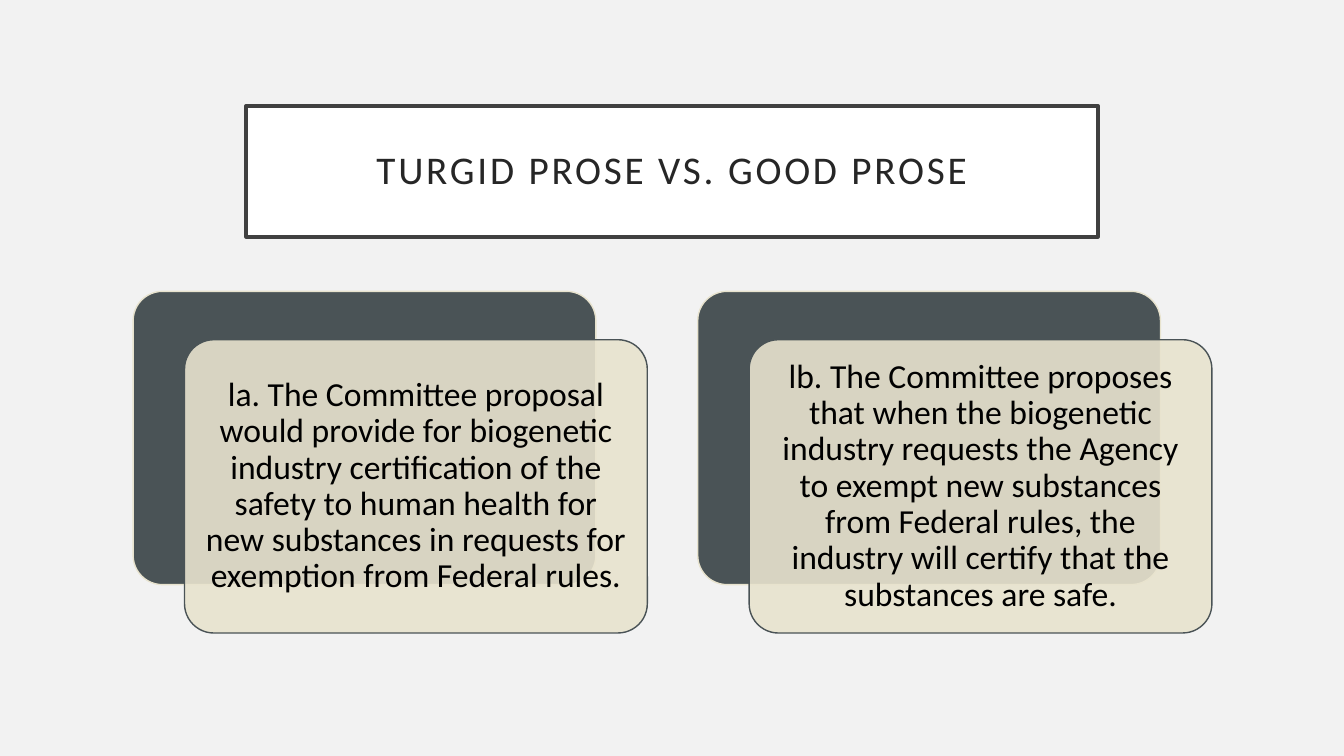
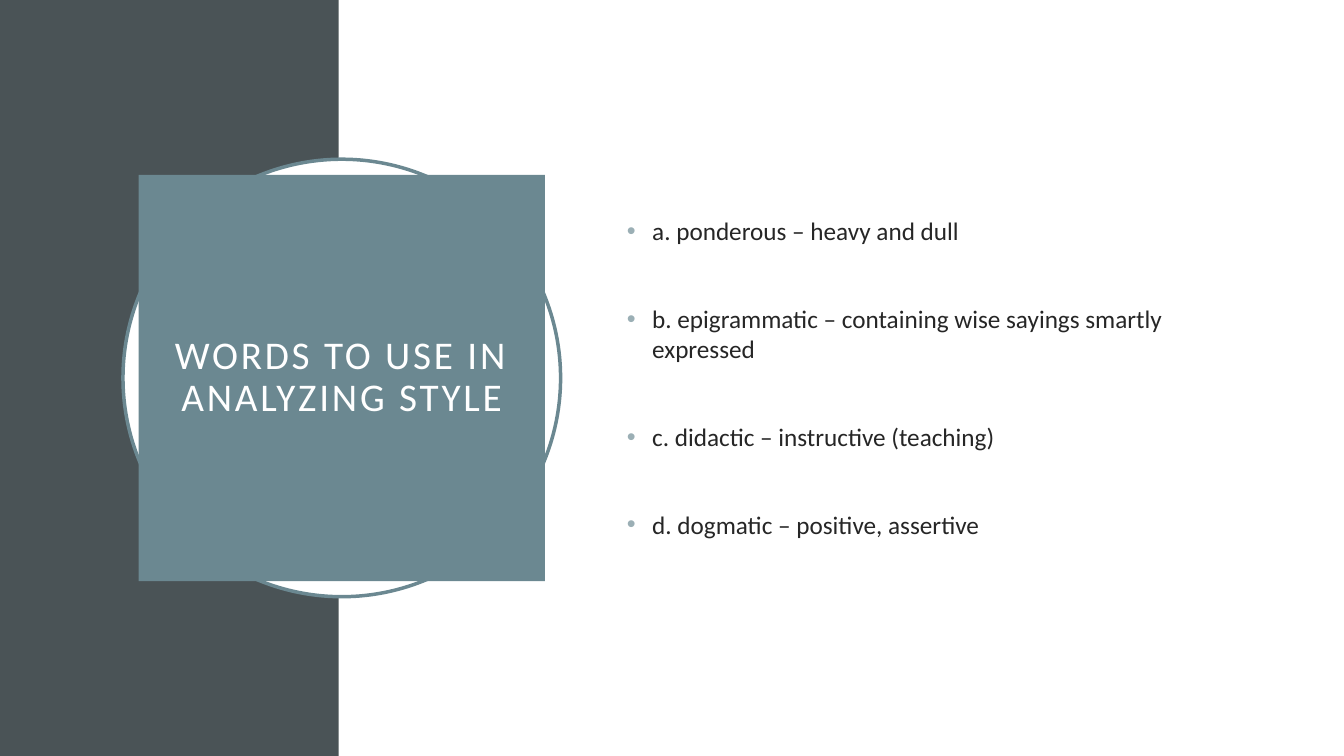
from dataclasses import dataclass

from lxml import etree
from pptx import Presentation
from pptx.dml.color import RGBColor
from pptx.enum.shapes import MSO_SHAPE
from pptx.enum.text import MSO_ANCHOR, PP_ALIGN
from pptx.oxml.ns import qn
from pptx.util import Inches, Pt

RECT, ROUND, OVAL = MSO_SHAPE.RECTANGLE, MSO_SHAPE.ROUNDED_RECTANGLE, MSO_SHAPE.OVAL
MIDDLE = MSO_ANCHOR.MIDDLE
LEFT, CENTER = PP_ALIGN.LEFT, PP_ALIGN.CENTER


@dataclass(frozen=True)
class Theme:
    font: str = "Calibri"
    wide: float = 13.33
    high: float = 7.5
    white: str = "FFFFFF"
    pale: str = "F2F2F2"
    slate: str = "4A5356"
    teal: str = "6B8891"
    mist: str = "9BAFB5"
    sand: str = "E8E3CE"
    frame: str = "404040"
    ink: str = "262626"
    black: str = "000000"
    head: int = 28
    card: int = 24
    body: int = 18


T = Theme()

CARDS = [
    "la. The Committee proposal would provide for biogenetic industry certification "
    "of the safety to human health for new substances in requests for exemption "
    "from Federal rules.",
    "lb. The Committee proposes that when the biogenetic industry requests the Agency "
    "to exempt new substances from Federal rules, the industry will certify that the "
    "substances are safe.",
]
WORDS = [
    "a. ponderous – heavy and dull",
    "b. epigrammatic – containing wise sayings smartly expressed",
    "c. didactic – instructive (teaching)",
    "d. dogmatic – positive, assertive",
]


def rgb(color):
    return RGBColor.from_string(color)


def new_slide(deck, color):
    slide = deck.slides.add_slide(deck.slide_layouts[6])
    slide.background.fill.solid()
    slide.background.fill.fore_color.rgb = rgb(color)
    return slide


def add_box(slide, kind, box, fill, line=None, weight=1, alpha=None):
    """Draw a filled shape; box is left, top, width, height in inches."""
    shape = slide.shapes.add_shape(kind, *map(Inches, box))
    shape.shadow.inherit = False
    shape.fill.solid()
    shape.fill.fore_color.rgb = rgb(fill)
    if alpha:
        tint = shape.fill._xPr.find(".//" + qn("a:srgbClr"))
        etree.SubElement(tint, qn("a:alpha"), val=str(alpha * 1000))
    if line:
        shape.line.color.rgb = rgb(line)
        shape.line.width = Pt(weight)
    else:
        shape.line.fill.background()
    if kind == ROUND:
        shape.adjustments[0] = 0.1
    return shape


def set_text(shape, lines, size, color, inset, align=CENTER, lead=0.9):
    frame = shape.text_frame
    frame.word_wrap = True
    frame.vertical_anchor = MIDDLE
    frame.margin_left = frame.margin_right = Inches(inset)
    frame.margin_top = frame.margin_bottom = Inches(inset)
    frame.text = "\n".join(lines)
    for para in frame.paragraphs:
        para.alignment = align
        para.line_spacing = lead
        font = para.runs[0].font
        font.name, font.size = T.font, Pt(size)
        font.color.rgb = rgb(color)
    return frame


def add_title(slide, box, text, fill, color, line=None):
    shape = add_box(slide, RECT, box, fill, line, 2.5)
    frame = set_text(shape, [text], T.head, color, 0.2)
    frame.paragraphs[0].runs[0].font._element.set("spc", "200")


def add_card(slide, left, top, text):
    """Draw a dark plate with a sheer text card set down and to the right."""
    wide, high = 4.59, 2.91
    add_box(slide, ROUND, (left, top, wide, high), T.slate, T.sand)
    front = (left + 0.51, top + 0.48, wide, high)
    card = add_box(slide, ROUND, front, T.sand, T.slate, alpha=90)
    set_text(card, [text], T.card, T.black, 0.1)


def add_list(slide, box, items):
    shape = slide.shapes.add_textbox(*map(Inches, box))
    frame = set_text(shape, items, T.body, T.ink, 0.1, LEFT, 1.0)
    for i, para in enumerate(frame.paragraphs):
        para.space_before = Pt(41 if i else 0)
        props = para._p.get_or_add_pPr()
        props.set("marL", str(Inches(0.25)))
        props.set("indent", str(-Inches(0.25)))
        tint = etree.SubElement(props, qn("a:buClr"))
        etree.SubElement(tint, qn("a:srgbClr"), val=T.mist)
        etree.SubElement(props, qn("a:buFont"), typeface="Arial")
        etree.SubElement(props, qn("a:buChar"), char="•")


def prose_slide(deck):
    slide = new_slide(deck, T.pale)
    wide = 8.45
    add_title(slide, ((T.wide - wide) / 2, 1.05, wide, 1.3),
              "TURGID PROSE VS. GOOD PROSE", T.white, T.ink, T.frame)
    # Two equal columns
    for col, text in enumerate(CARDS):
        add_card(slide, 1.32 + col * 5.6, 2.89, text)


def words_slide(deck):
    slide = new_slide(deck, T.white)
    # Side band
    add_box(slide, RECT, (0, 0, 3.36, T.high), T.slate)
    # Ring and square share one centre
    mid, ring, side = 3.39, 4.34, 4.03
    add_box(slide, OVAL, (mid - ring / 2, (T.high - ring) / 2, ring, ring),
            T.white, T.teal, 2.5)
    add_title(slide, (mid - side / 2, (T.high - side) / 2, side, side),
              "WORDS TO USE IN ANALYZING STYLE", T.teal, T.white)
    add_list(slide, (6.12, 1.53, 5.82, 4.43), WORDS)


def main():
    deck = Presentation()
    deck.slide_width, deck.slide_height = Inches(T.wide), Inches(T.high)
    prose_slide(deck)
    words_slide(deck)
    deck.save("out.pptx")


if __name__ == "__main__":
    main()
